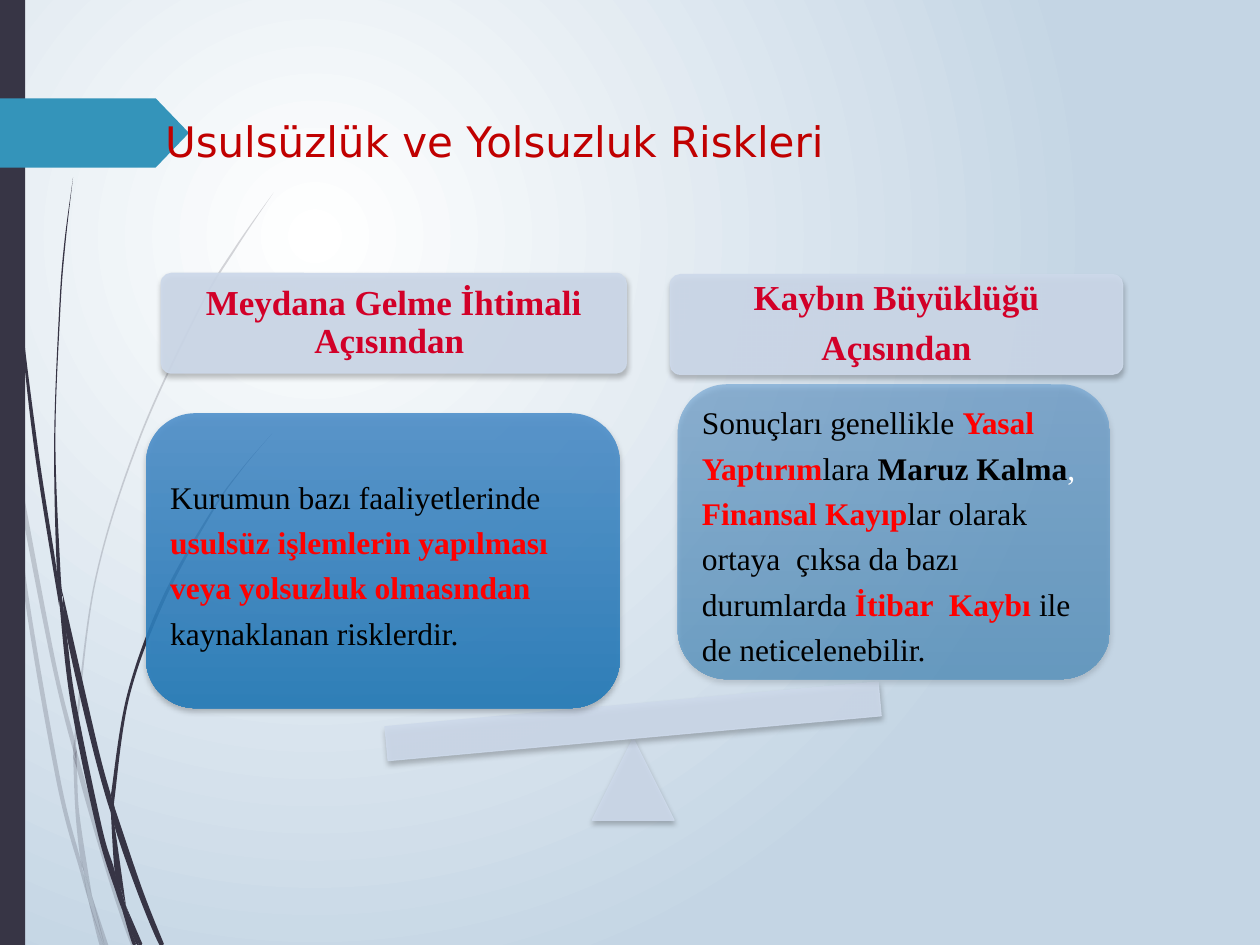
from dataclasses import dataclass

from lxml.etree import SubElement
from pptx import Presentation
from pptx.dml.color import RGBColor
from pptx.enum.shapes import MSO_SHAPE
from pptx.enum.text import MSO_ANCHOR, PP_ALIGN
from pptx.oxml.ns import qn
from pptx.util import Inches, Pt


@dataclass(frozen=True)
class Theme:
    white: str = "FFFFFF"
    backdrop: str = "C4D5E4"
    dark: str = "373545"
    tag: str = "3494BA"
    title: str = "C00000"
    pale: str = "CDD9EA"
    heading: str = "D20028"
    card: tuple = ("4F90CB", "237AB8")
    ink: str = "000000"
    alert: str = "FF0000"
    title_font: str = "DejaVu Sans"
    body_font: str = "Times New Roman"
    title_size: float = 24
    heading_size: float = 20
    body_size: float = 18


T = Theme()

# Each strand is a ribbon: the points of one edge, then those of the edge back.
FAINT_STRANDS = [
    ([(0, 2.82), (.06, 3.22), (.08, 3.5)], [(.07, 3.44), (0, 2.99)]),
    ([(.1, 3.45), (.43, 5.2), (.59, 5.86)], [(.59, 5.99), (.4, 5.22), (.12, 3.76)]),
    ([(.61, 5.96), (.64, 6.07), (.88, 6.92), (1.08, 7.5)],
     [(1.04, 7.5), (.85, 6.94), (.61, 6.1)]),
    ([(.73, 7.11), (.86, 7.5)], [(.83, 7.5)]),
    ([(.08, 3.5), (.12, 3.76), (.22, 4.69), (.48, 6.19), (.64, 6.83), (.7, 7.14)],
     [(.64, 6.93), (.45, 6.21), (.19, 4.7)]),
    ([(.58, 5.99), (.61, 6.1), (.63, 6.46), (.73, 7.11)],
     [(.67, 6.92), (.64, 6.83), (.6, 6.46)]),
    ([(.59, 5.84), (.75, 4.61), (1.1, 3.48), (1.58, 2.44), (1.86, 1.97), (2.17, 1.53)],
     [(1.87, 1.98), (1.59, 2.45), (1.11, 3.49), (.76, 4.62), (.61, 5.84), (.61, 5.96)]),
    ([(.7, 7.14), (.82, 7.5)], [(.79, 7.5)]),
    ([(.59, 5.86), (.61, 5.96), (.61, 6.1)], [(.58, 5.99)]),
    ([(.65, 6.83), (.7, 7.14), (.82, 7.5)], [(.83, 7.5), (.73, 7.11), (.67, 6.92)]),
]
DARK_STRANDS = [
    ([(.02, 0), (.05, 1.1), (.14, 2.33), (.27, 3.55), (.47, 4.81)],
     [(.45, 4.53), (.3, 3.55), (.15, 2.32), (.06, 1.09), (.03, 0)]),
    ([(.5, 4.72), (.77, 5.9), (.88, 6.31)], [(.88, 6.45), (.73, 5.92), (.53, 5.05)]),
    ([(.91, 6.41), (1.13, 7.06), (1.3, 7.49)], [(1.26, 7.49), (1.09, 7.08), (.91, 6.56)]),
    ([(.47, 4.77), (.53, 5.05), (.6, 5.56), (.81, 6.57), (.91, 6.91), (.97, 7.22)],
     [(.92, 7.08), (.77, 6.59), (.56, 5.57)]),
    ([(.5, 4.72), (.48, 4.53), (.44, 3.49), (.48, 2.45), (.52, 1.93), (.58, 1.41)],
     [(.51, 1.93), (.47, 2.45), (.43, 3.49), (.45, 4.49), (.49, 4.72)]),
    ([(1, 7.19), (1.13, 7.49)], [(1.1, 7.49)]),
    ([(.45, 4.49), (.49, 4.72), (.53, 5.05)], [(.47, 4.77)]),
    ([(.88, 6.31), (1.01, 5.51), (1.29, 4.74), (1.68, 4.05), (1.91, 3.73), (2.16, 3.44)],
     [(1.91, 3.74), (1.69, 4.06), (1.31, 4.76), (1.03, 5.52), (.91, 6.33), (.91, 6.41)]),
    ([(.97, 7.22), (1.08, 7.49)], [(1.05, 7.49)]),
    ([(.88, 6.45), (.91, 6.56), (1, 7.19)], [(.96, 7.06), (.91, 6.91)]),
    ([(.88, 6.31), (.91, 6.41), (.91, 6.56)], [(.88, 6.45)]),
    ([(.91, 6.91), (.97, 7.22), (1.08, 7.49)], [(1.1, 7.49), (1, 7.19), (.96, 7.06)]),
]


def rgb(code):
    return RGBColor.from_string(code)


def bezier_segments(points):
    """Two handles and an end point for each step of a smooth curve."""
    padded = [points[0], *points, points[-1]]
    for a, b, c, d in zip(padded, padded[1:], padded[2:], padded[3:]):
        yield (tuple(q + (r - p) / 6 for p, q, r in zip(a, b, c)),
               tuple(r - (u - q) / 6 for q, r, u in zip(b, c, d)), c)


def curve_outline(sp, segments, corner):
    """Turn the straight steps of a freeform into Bezier curves."""
    lines = list(sp.element.spPr.iter(qn("a:lnTo")))
    for line, segment in zip(lines, segments):
        line.tag = qn("a:cubicBezTo")
        line.remove(line[0])
        for point in segment:
            x, y = (Inches(v - o) for v, o in zip(point, corner))
            SubElement(line, qn("a:pt"), x=str(x), y=str(y))


def set_alpha(sp, percent):
    for color in sp.element.spPr.iter(qn("a:srgbClr")):
        SubElement(color, qn("a:alpha"), val=str(percent * 1000))


def paint(sp, color):
    sp.shadow.inherit = False
    sp.fill.solid()
    sp.fill.fore_color.rgb = rgb(color)
    sp.line.fill.background()


def add_solid(s, kind, box, color):
    sp = s.shapes.add_shape(kind, *map(Inches, box))
    paint(sp, color)
    return sp


def add_drop_shadow(sp):
    effects = sp.element.spPr.find(qn("a:effectLst"))
    shadow = SubElement(effects, qn("a:outerShdw"), blurRad=str(Pt(3)), dist=str(Pt(2)),
                        dir="5400000", rotWithShape="0")
    color = SubElement(shadow, qn("a:srgbClr"), val=T.ink)
    SubElement(color, qn("a:alpha"), val="25000")


def set_stops(fill, colors):
    for stop, color, position in zip(fill.gradient_stops, colors, (0, 1)):
        stop.color.rgb = rgb(color)
        stop.position = position


def paint_background(s):
    fill = s.background.fill
    fill.gradient()
    set_stops(fill, (T.white, T.backdrop))
    lin = next(s.element.iter(qn("a:lin")))
    grad = lin.getparent()
    grad.remove(lin)
    radial = SubElement(grad, qn("a:path"), path="circle")
    SubElement(radial, qn("a:fillToRect"), l="50000", t="50000", r="100000", b="100000")


def add_strands(s, left, top, strands, alpha):
    group = s.shapes.add_group_shape()
    for out, back in strands:
        back = [out[-1], *back, out[0]]
        outline = out + back[1:]
        start, *rest = [(Inches(x), Inches(y)) for x, y in outline]
        builder = group.shapes.build_freeform(*start)
        builder.add_line_segments(rest)
        sp = builder.convert_to_shape(Inches(left), Inches(top))
        curve_outline(sp, [*bezier_segments(out), *bezier_segments(back)],
                      [min(axis) for axis in zip(*outline)])
        paint(sp, T.dark)
        if alpha < 100:
            set_alpha(sp, alpha)


def add_side_decoration(s, box):
    left, top, _, height = box
    add_strands(s, left, top, FAINT_STRANDS, 20)
    add_strands(s, left, top, DARK_STRANDS, 100)
    add_solid(s, MSO_SHAPE.RECTANGLE, (left, top, 0.2, height), T.dark)
    tag = add_solid(s, MSO_SHAPE.PENTAGON, (left, top + 0.78, 1.5, 0.55), T.tag)
    tag.adjustments[0] = 0.48


def fill_text(tf, paragraphs, size, font, para_format, inset, anchor=MSO_ANCHOR.MIDDLE):
    """Write paragraphs, each a list of (text, color, bold) runs."""
    tf.word_wrap = True
    tf.vertical_anchor = anchor
    for side in ("left", "top", "right", "bottom"):
        setattr(tf, f"margin_{side}", Inches(inset))
    for i, runs in enumerate(paragraphs):
        p = tf.paragraphs[0] if i == 0 else tf.add_paragraph()
        for name, value in para_format.items():
            setattr(p, name, value)
        for text, color, bold in runs:
            r = p.add_run()
            r.text = text
            for name, value in {"size": Pt(size), "name": font, "bold": bold}.items():
                setattr(r.font, name, value)
            r.font.color.rgb = rgb(color)


def add_title(s, box, text):
    title = s.shapes.title
    for name, value in zip(("left", "top", "width", "height"), box):
        setattr(title, name, Inches(value))
    fill_text(title.text_frame, [[(text, T.title, False)]], T.title_size, T.title_font,
              {"alignment": PP_ALIGN.LEFT}, 0.1, MSO_ANCHOR.TOP)
    title.text_frame.margin_top = Inches(0.05)
    title.element.getparent().append(title.element)  # in front of the tag


def add_inner_text(s, box, gap):
    x, y, w, h = box
    inner = (x + gap, y + gap, w - 2 * gap, h - 2 * gap)
    return s.shapes.add_textbox(*map(Inches, inner)).text_frame


def add_pale(s, kind, box):
    sp = add_solid(s, kind, box, T.pale)
    sp.line.color.rgb = rgb(T.pale)
    sp.line.width = Pt(0.75)
    set_alpha(sp, 90)
    add_drop_shadow(sp)
    return sp


def add_heading(s, box, lines):
    add_pale(s, MSO_SHAPE.ROUNDED_RECTANGLE, box).adjustments[0] = 0.1
    fill_text(add_inner_text(s, box, 0.02), [[(line, T.heading, True)] for line in lines],
              T.heading_size, T.body_font,
              {"alignment": PP_ALIGN.CENTER, "line_spacing": 0.9, "space_after": Pt(7)}, 0.08)


def add_card(s, box, runs, alpha):
    sp = add_solid(s, MSO_SHAPE.ROUNDED_RECTANGLE, box, T.card[0])
    sp.fill.gradient()
    sp.fill.gradient_angle = 270
    set_stops(sp.fill, T.card)
    set_alpha(sp, alpha)
    add_drop_shadow(sp)
    fill_text(add_inner_text(s, box, 0.12), [runs], T.body_size, T.body_font,
              {"alignment": PP_ALIGN.LEFT, "line_spacing": 1.2}, 0.07)


def add_balance(s, box):
    """Two weighed topics above a tilted beam on its pivot."""
    x, y = box[:2]
    add_heading(s, (x + 0.12, y, 3.69, 0.79), ["Meydana Gelme İhtimali Açısından "])
    add_heading(s, (x + 4.16, y + 0.01, 3.59, 0.79), ["Kaybın Büyüklüğü", "Açısından"])
    add_pale(s, MSO_SHAPE.ISOSCELES_TRIANGLE, (x + 3.54, y + 3.69, 0.65, 0.65))
    add_pale(s, MSO_SHAPE.RECTANGLE, (x + 1.9, y + 3.42, 3.93, 0.27)).rotation = 354.8
    add_card(s, (x, y + 1.11, 3.76, 2.34), [
        ("Kurumun bazı faaliyetlerinde ", T.ink, False),
        ("usulsüz işlemlerin yapılması veya yolsuzluk olmasından", T.alert, True),
        (" kaynaklanan risklerdir.", T.ink, False)], 90)
    add_card(s, (x + 4.22, y + 0.88, 3.43, 2.34), [
        ("Sonuçları genellikle ", T.ink, False), ("Yasal Yaptırım", T.alert, True),
        ("lara ", T.ink, False), ("Maruz Kalma", T.ink, True), (", ", T.white, False),
        ("Finansal Kayıp", T.alert, True),
        ("lar olarak ortaya  çıksa da bazı durumlarda ", T.ink, False),
        ("İtibar  Kaybı ", T.alert, True), ("ile de neticelenebilir.", T.ink, False)], 50)


def main():
    prs = Presentation()
    prs.slide_width, prs.slide_height = Inches(10), Inches(7.5)
    s = prs.slides.add_slide(prs.slide_layouts[5])
    paint_background(s)
    add_side_decoration(s, (0, 0, 2.17, 7.5))
    add_title(s, (1.21, 0.87, 8.39, 0.87), "Usulsüzlük ve Yolsuzluk Riskleri")
    add_balance(s, (1.16, 2.17, 7.75, 4.34))
    prs.save("out.pptx")


if __name__ == "__main__":
    main()
